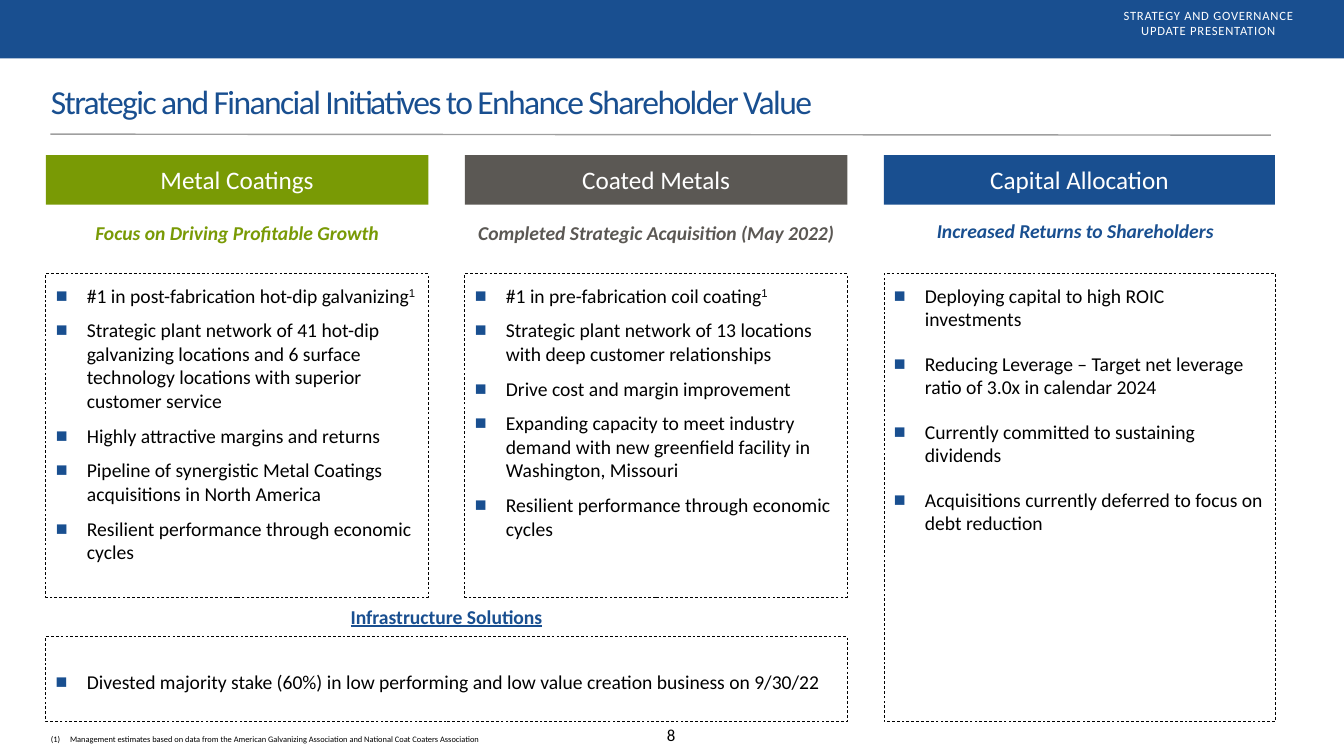
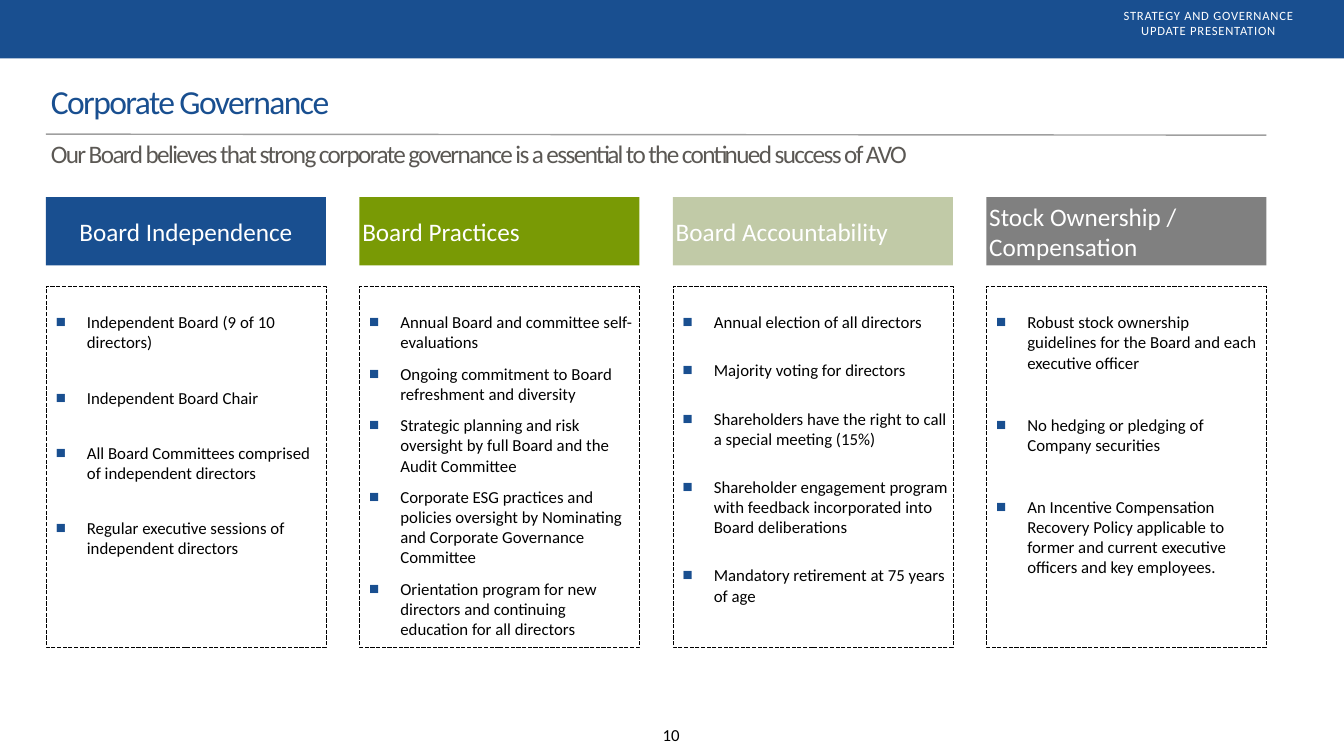
"""Build two strategy and governance slides with banded columns of bullets."""
from lxml import etree
from pptx import Presentation
from pptx import util as u
from pptx.dml.color import RGBColor
from pptx.enum import dml, shapes, text
from pptx.oxml.ns import qn

COLORS = {"blue": "194F90", "green": "799A05", "brown": "5B5854", "sage": "C1CAA7",
          "gray": "808080", "white": "FFFFFF", "black": "000000"}
LEFT, CENTER = text.PP_ALIGN.LEFT, text.PP_ALIGN.CENTER
TOP, MIDDLE = text.MSO_ANCHOR.TOP, text.MSO_ANCHOR.MIDDLE
SMALL_INSETS = (0.15,) * 4
DEFAULT_INSETS = (0.25, 0.13, 0.25, 0.13)
EDGE = 2.31
SLIDE_WIDTH, SLIDE_HEIGHT = 67.74, 38.1
TAG = ["STRATEGY AND GOVERNANCE", "UPDATE PRESENTATION"]

INITIATIVES = {
    "title": "Strategic and Financial Initiatives to Enhance Shareholder Value",
    "page": "8", "rule_left": 2.54, "pitch": 21.12,
    "header_top": 7.82, "header_height": 2.49, "list_top": 13.79,
    "size": 28, "insets": (0.5, 0.5, 0.5, 0.25),
    "line": (1, dml.MSO_LINE.DASH),
    "columns": [
        {"header": "Metal Coatings", "color": "green", "align": CENTER,
         "width": 19.28, "height": 16.31, "gap": 8,
         "tagline": "Focus on Driving Profitable Growth", "tagline_top": 11,
         "items": [
             ("#1 in post-fabrication hot-dip galvanizing", "1"),
             "Strategic plant network of 41 hot-dip galvanizing locations and 6 surface "
             "technology locations with superior customer service",
             "Highly attractive margins and returns",
             "Pipeline of synergistic Metal Coatings acquisitions in North America",
             "Resilient performance through economic cycles"]},
        {"header": "Coated Metals", "color": "brown", "align": CENTER,
         "width": 19.28, "height": 16.31, "gap": 8,
         "tagline": "Completed Strategic Acquisition (May 2022)", "tagline_top": 11,
         "items": [
             ("#1 in pre-fabrication coil coating", "1"),
             "Strategic plant network of 13 locations with deep customer relationships",
             "Drive cost and margin improvement",
             "Expanding capacity to meet industry demand with new greenfield facility in "
             "Washington, Missouri",
             "Resilient performance through economic cycles"]},
        {"header": "Capital Allocation", "color": "blue", "align": CENTER,
         "width": 19.71, "height": 22.58, "gap": 15,
         "tagline": "Increased Returns to Shareholders", "tagline_top": 10.87,
         "items": [
             "Deploying capital to high ROIC investments",
             "Reducing Leverage – Target net leverage ratio of 3.0x in calendar 2024",
             "Currently committed to sustaining dividends",
             "Acquisitions currently deferred to focus on debt reduction"]},
    ],
}
INFRASTRUCTURE = "Infrastructure Solutions"
DIVESTMENT = ("Divested majority stake (60%) in low performing and low value creation "
              "business on 9/30/22")
FOOTNOTE = ("Management estimates based on data from the American Galvanizing Association "
            "and National Coat Coaters Association")

GOVERNANCE = {
    "title": "Corporate Governance",
    "page": "10", "rule_left": EDGE, "pitch": 15.8,
    "header_top": 9.93, "header_height": 3.45, "list_top": 14.45,
    "size": 24, "insets": (0.5, 1.27, 0.25, 0.25),
    "line": (0.75, dml.MSO_LINE.LONG_DASH),
    "columns": [
        {"header": "Board Independence", "color": "blue", "align": CENTER,
         "width": 14.12, "height": 18.16, "gap": 25,
         "items": [
             "Independent Board (9 of 10 directors)",
             "Independent Board Chair",
             "All Board Committees comprised of independent directors",
             "Regular executive sessions of independent directors"]},
        {"header": "Board Practices", "color": "green", "align": LEFT,
         "width": 14.12, "height": 18.16, "gap": 8,
         "items": [
             "Annual Board and committee self-evaluations",
             "Ongoing commitment to Board refreshment and diversity",
             "Strategic planning and risk oversight by full Board and the Audit Committee",
             "Corporate ESG practices and policies oversight by Nominating and Corporate "
             "Governance Committee",
             "Orientation program for new directors and continuing education for all "
             "directors"]},
        {"header": "Board Accountability", "color": "sage", "align": LEFT,
         "width": 14.12, "height": 18.16, "gap": 20,
         "items": [
             "Annual election of all directors",
             "Majority voting for directors",
             "Shareholders have the right to call a special meeting (15%)",
             "Shareholder engagement program with feedback incorporated into Board "
             "deliberations",
             "Mandatory retirement at 75 years of age"]},
        {"header": "Stock Ownership / Compensation", "color": "gray", "align": LEFT,
         "width": 14.12, "height": 18.16, "gap": 30,
         "items": [
             "Robust stock ownership guidelines for the Board and each executive officer",
             "No hedging or pledging of Company securities",
             "An Incentive Compensation Recovery Policy applicable to former and current "
             "executive officers and key employees."]},
    ],
}
BELIEF = ("Our Board believes that strong corporate governance is a essential to the "
          "continued success of AVO")


def rgb(name):
    return RGBColor.from_string(COLORS[name])


def place(shape, left, top, width, height):
    shape.left, shape.top = u.Cm(left), u.Cm(top)
    shape.width, shape.height = u.Cm(width), u.Cm(height)


def set_frame(shape, insets, anchor=TOP, wrap=True):
    frame = shape.text_frame
    frame.auto_size = text.MSO_AUTO_SIZE.NONE
    frame.word_wrap = wrap
    frame.vertical_anchor = anchor
    (frame.margin_left, frame.margin_top,
     frame.margin_right, frame.margin_bottom) = map(u.Cm, insets)
    return frame


def add_run(paragraph, words, size, color, font="Calibri", bold=None, italic=None,
            underline=None, **attributes):
    run = paragraph.add_run()
    run.text = words
    run.font.name, run.font.size = font, u.Pt(size)
    run.font.bold, run.font.italic, run.font.underline = bold, italic, underline
    run.font.color.rgb = rgb(color)
    for name, value in attributes.items():
        run._r.get_or_add_rPr().set(name, str(value))


def write(shape, lines, size, color, align=CENTER, insets=SMALL_INSETS, anchor=TOP,
          wrap=True, line_spacing=None, **style):
    frame = set_frame(shape, insets, anchor, wrap)
    for index, line in enumerate(lines):
        paragraph = frame.add_paragraph() if index else frame.paragraphs[0]
        paragraph.alignment = align
        paragraph.line_spacing = line_spacing
        add_run(paragraph, line, size, color, **style)
    return frame


def add_text(slide, box, lines, size, color, **style):
    shape = slide.shapes.add_textbox(*map(u.Cm, box))
    return write(shape, lines, size, color, **style)


def add_rectangle(slide, box, fill=None):
    shape = slide.shapes.add_shape(shapes.MSO_SHAPE.RECTANGLE, *map(u.Cm, box))
    shape.shadow.inherit = False
    if fill:
        shape.fill.solid()
        shape.fill.fore_color.rgb = rgb(fill)
        shape.line.fill.background()
    return shape


def indent(paragraph, distance):
    properties = paragraph._p.get_or_add_pPr()
    properties.set("marL", str(u.Cm(distance)))
    properties.set("indent", str(-u.Cm(distance)))
    return properties


def add_square_bullet(paragraph):
    properties = indent(paragraph, 1.57)
    color = etree.SubElement(properties, qn("a:buClr"))
    etree.SubElement(color, qn("a:srgbClr"), val=COLORS["blue"])
    etree.SubElement(properties, qn("a:buFont"), typeface="Arial")
    etree.SubElement(properties, qn("a:buChar"), char="■")


def fill_list(shape, items, content, gap, anchor=TOP):
    width, dash = content["line"]
    shape.fill.background()
    shape.line.color.rgb = rgb("black")
    shape.line.width, shape.line.dash_style = u.Pt(width), dash
    frame = set_frame(shape, content["insets"], anchor)
    for index, item in enumerate(items):
        paragraph = frame.add_paragraph() if index else frame.paragraphs[0]
        add_square_bullet(paragraph)
        paragraph.alignment = LEFT
        paragraph.space_before = u.Pt(gap if index else 0)
        paragraph.space_after = u.Pt(gap)
        words, mark = (item, None) if isinstance(item, str) else item
        add_run(paragraph, words, content["size"], "black")
        if mark:
            add_run(paragraph, mark, content["size"], "black", font="Arial",
                    baseline=30000)


def add_rule(slide, left):
    rule = slide.shapes.add_connector(shapes.MSO_CONNECTOR.STRAIGHT, u.Cm(left),
                                      u.Cm(6.76), u.Cm(left + 61.52), u.Cm(6.81))
    rule.line.color.rgb = rgb("gray")
    rule.line.width = u.Pt(2)
    for color in rule.element.iter(qn("a:srgbClr")):
        etree.SubElement(color, qn("a:alpha"), val="75000")
    etree.SubElement(rule.element.spPr, qn("a:effectLst"))


def add_band_to_master(presentation, slide):
    band = add_rectangle(slide, (0, 0, SLIDE_WIDTH, 2.95), "blue")
    tag = slide.shapes.add_textbox(*map(u.Cm, (55.37, 0.25, 11.07, 1.83)))
    write(tag, TAG, 18, "white", anchor=MIDDLE, wrap=False, spc=110)
    for shape in (band, tag):
        presentation.slide_master.shapes.element.append(shape.element)


def add_column_slide(presentation, content):
    slide = presentation.slides.add_slide(presentation.slide_layouts[1])
    title, body = slide.placeholders
    place(title, EDGE, 4.19, 61.52, 3.18)
    write(title, [content["title"]], 48, "blue", align=LEFT, insets=DEFAULT_INSETS,
          line_spacing=0.9, spc=-230)
    add_rule(slide, content["rule_left"])
    for index, column in enumerate(content["columns"]):
        left, width = EDGE + index * content["pitch"], column["width"]
        header = add_rectangle(slide, (left, content["header_top"], width,
                                       content["header_height"]), column["color"])
        write(header, [column["header"]], 36, "white", align=column["align"],
              anchor=MIDDLE)
        if "tagline" in column:
            add_text(slide, (left, column["tagline_top"], 19.28, 1.47),
                     [column["tagline"]], 28, column["color"], bold=True, italic=True)
        box = (left, content["list_top"], width, column["height"])
        if index:
            panel = add_rectangle(slide, box)
        else:
            panel = body
            place(panel, *box)
        fill_list(panel, column["items"], content, column["gap"])
    add_text(slide, (33.08, 36.37, 1.5, 1.32), [content["page"]], 24, "black", wrap=False)
    return slide


def main():
    presentation = Presentation()
    presentation.slide_width = u.Cm(SLIDE_WIDTH)
    presentation.slide_height = u.Cm(SLIDE_HEIGHT)

    initiatives = add_column_slide(presentation, INITIATIVES)
    add_band_to_master(presentation, initiatives)
    add_text(initiatives, (17.45, 30.33, 10.11, 1.47), [INFRASTRUCTURE], 28, "blue",
             wrap=False, bold=True, underline=True)
    divestment = add_rectangle(initiatives, (EDGE, 32.08, 40.39, 4.29))
    fill_list(divestment, [DIVESTMENT], INITIATIVES, 0, MIDDLE)
    footnote = add_text(initiatives, (EDGE, 36.86, 33.86, 0.76), [FOOTNOTE], 12, "black",
                        align=LEFT, insets=DEFAULT_INSETS)
    properties = indent(footnote.paragraphs[0], 0.97)
    etree.SubElement(properties, qn("a:buFont"), typeface="Calibri")
    etree.SubElement(properties, qn("a:buAutoNum"), type="arabicParenBoth")

    governance = add_column_slide(presentation, GOVERNANCE)
    add_text(governance, (EDGE, 6.99, 61.52, 2.01), [BELIEF], 36, "brown", align=LEFT,
             insets=DEFAULT_INSETS, line_spacing=0.9, spc=-230)

    presentation.save("out.pptx")


if __name__ == "__main__":
    main()
